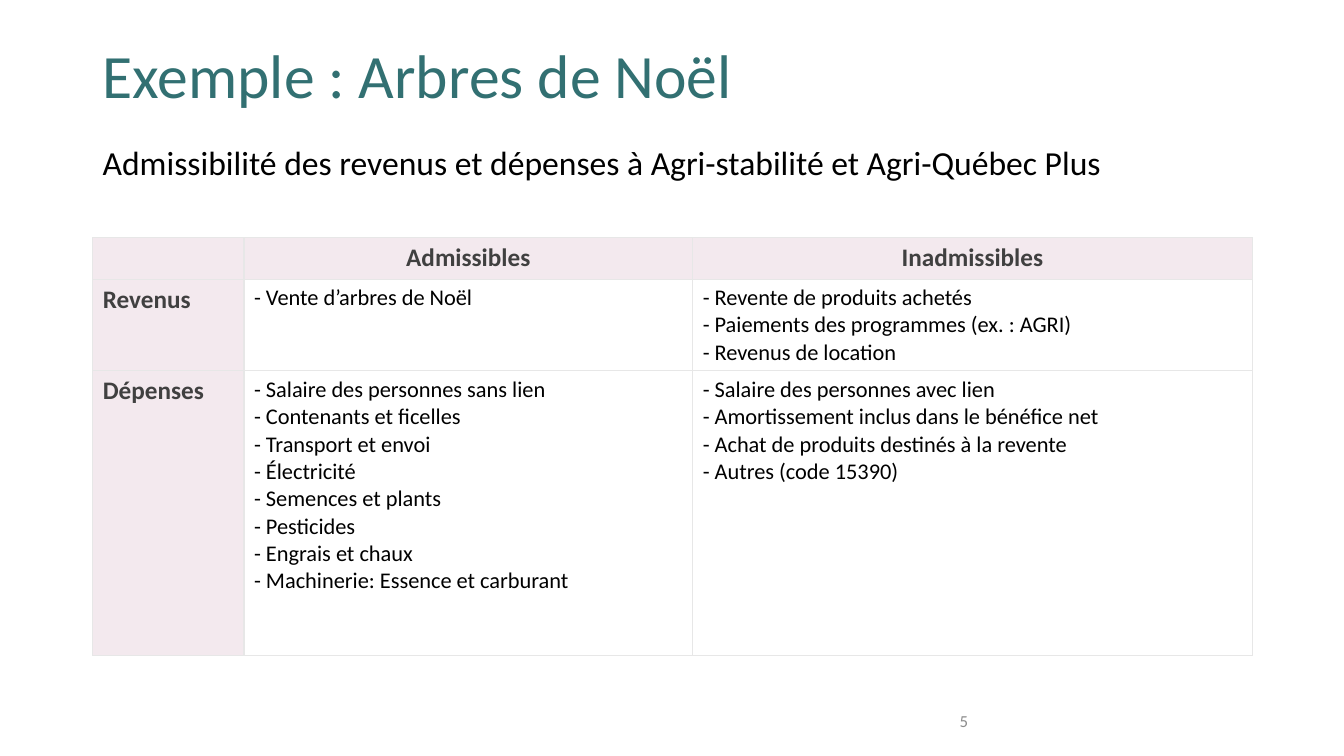
from pptx import Presentation
from pptx.dml.color import RGBColor
from pptx.enum.text import MSO_ANCHOR, PP_ALIGN
from pptx.oxml import parse_xml
from pptx.oxml.ns import nsdecls
from pptx.util import Pt

PX = 9144  # 100 px to the inch
TEAL = RGBColor(0x32, 0x70, 0x72)
BLACK = RGBColor(0, 0, 0)
DARK = RGBColor(0x40, 0x40, 0x40)
GRAY = RGBColor(0x8C, 0x8C, 0x8C)
PINK = RGBColor(0xF3, 0xE9, 0xEE)
WHITE = RGBColor(0xFF, 0xFF, 0xFF)
RULE = RGBColor(0xE7, 0xE7, 0xE7)

HEADS = ["", "Admissibles", "Inadmissibles"]
ROWS = [
    ("Revenus",
     ["Vente d’arbres de Noël"],
     ["Revente de produits achetés", "Paiements des programmes (ex. : AGRI)",
      "Revenus de location"]),
    ("Dépenses",
     ["Salaire des personnes sans lien", "Contenants et ficelles",
      "Transport et envoi", "Électricité", "Semences et plants", "Pesticides",
      "Engrais et chaux", "Machinerie: Essence et carburant"],
     ["Salaire des personnes avec lien",
      "Amortissement inclus dans le bénéfice net",
      "Achat de produits destinés à la revente", "Autres (code 15390)"]),
]


class Deck:
    font = "Calibri"

    def __init__(self, wide, high):
        self.prs = Presentation()
        self.prs.slide_width = wide * PX
        self.prs.slide_height = high * PX
        self.slide = self.prs.slides.add_slide(self.prs.slide_layouts[6])

    def lines(self, frame, lines, size, color, bold=False, align=PP_ALIGN.LEFT):
        for i, line in enumerate(lines):
            para = frame.add_paragraph() if i else frame.paragraphs[0]
            para.alignment = align
            run = para.add_run()
            run.text = line
            run.font.name = self.font
            run.font.size = Pt(size)
            run.font.bold = bold
            run.font.color.rgb = color

    def text(self, box, line, size, color, anchor=MSO_ANCHOR.TOP):
        shape = self.slide.shapes.add_textbox(*(n * PX for n in box))
        frame = shape.text_frame
        frame.word_wrap = True
        frame.vertical_anchor = anchor
        self.lines(frame, [line], size, color)
        return frame

    def border(self, cell):
        props = cell._tc.get_or_add_tcPr()
        for i, side in enumerate("LRTB"):
            line = parse_xml(f'<a:ln{side} {nsdecls("a")} w="12700"><a:solidFill>'
                             f'<a:srgbClr val="{RULE}"/></a:solidFill></a:ln{side}>')
            props.insert(i, line)

    def cell(self, cell, lines, head, align=PP_ALIGN.LEFT):
        cell.fill.solid()
        cell.fill.fore_color.rgb = PINK if head else WHITE
        self.border(cell)
        size, color = (18, DARK) if head else (16, BLACK)
        self.lines(cell.text_frame, lines, size, color, head, align)

    def table(self, left, top, cols, rows):
        box = (left, top, sum(cols), sum(rows))
        grid = self.slide.shapes.add_table(
            len(rows), len(cols), *(n * PX for n in box)).table
        for col, wide in zip(grid.columns, cols):
            col.width = wide * PX
        for row, high in zip(grid.rows, rows):
            row.height = high * PX
        return grid


def main():
    deck = Deck(1333, 750)

    # Title and subtitle
    title = deck.text((92, 40, 1150, 90), "Exemple : Arbres de Noël", 44, TEAL)
    title.paragraphs[0].line_spacing = 0.9
    deck.text((92, 136, 1150, 50),
              "Admissibilité des revenus et dépenses à Agri-stabilité et Agri-Québec Plus",
              24, BLACK)

    # Eligibility table
    grid = deck.table(92, 236, [150, 445, 555], [41, 91, 282])
    for c, head in enumerate(HEADS):
        deck.cell(grid.cell(0, c), [head] if head else [], True, PP_ALIGN.CENTER)
    for r, (label, *lists) in enumerate(ROWS, 1):
        deck.cell(grid.cell(r, 0), [label], True)
        for c, items in enumerate(lists, 1):
            deck.cell(grid.cell(r, c), [f"- {item}" for item in items], False)

    # Page number
    deck.text((942, 695, 300, 40), "5", 12, GRAY, MSO_ANCHOR.MIDDLE)

    deck.prs.save("out.pptx")


if __name__ == "__main__":
    main()
